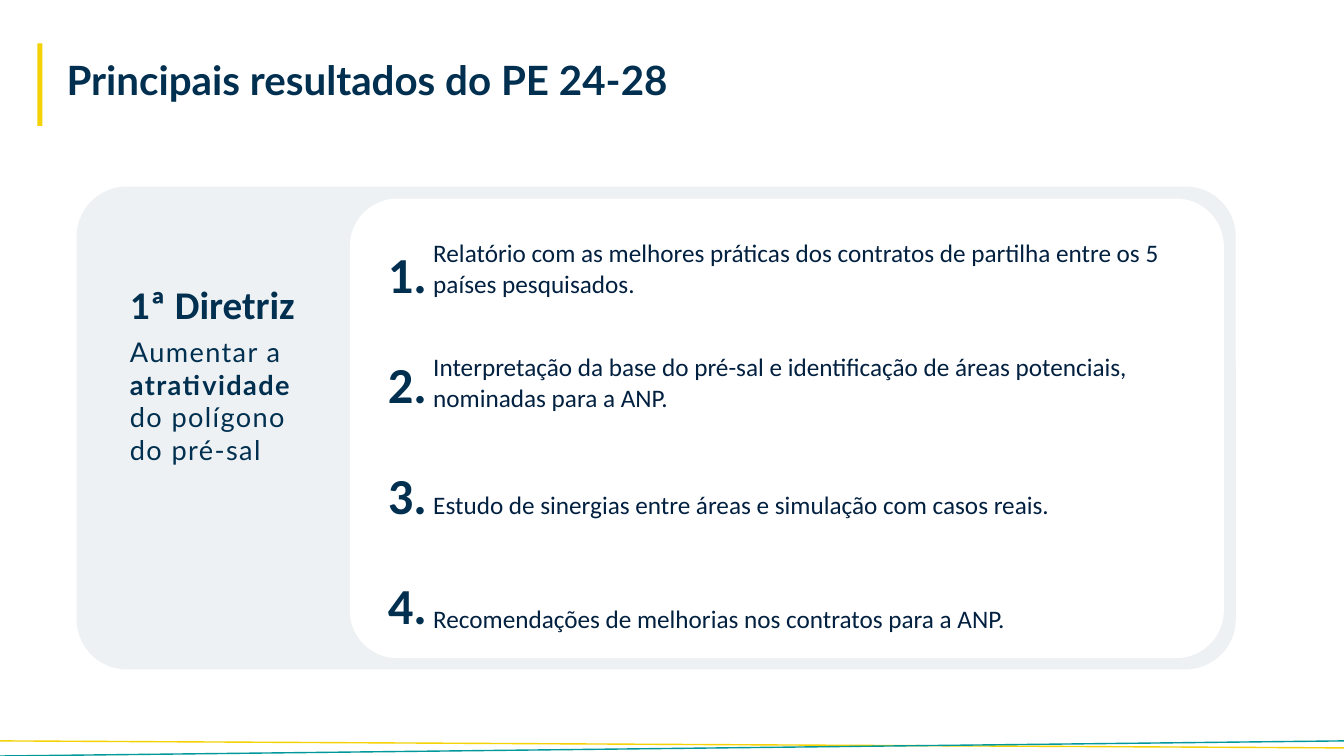
from dataclasses import dataclass

from lxml.etree import SubElement
from pptx import Presentation
from pptx.dml.color import RGBColor
from pptx.enum.shapes import MSO_CONNECTOR, MSO_SHAPE
from pptx.enum.text import MSO_ANCHOR, MSO_AUTO_SIZE, PP_ALIGN
from pptx.oxml.ns import qn
from pptx.util import Inches, Pt

COLORS = {
    "yellow": "F4D205",
    "teal": "00989A",
    "panel": "EDF1F3",
    "white": "FFFFFF",
    "navy": "002F4F",
    "ink": "022040",
}
WIDTH, HEIGHT = Inches(13.333), Inches(7.5)
TEXT_TOP, TEXT_STEP = 30.8, 15.07
NUMBER_TOP, NUMBER_STEP = 31.47, 14.62


@dataclass(frozen=True)
class Box:
    """A rectangle in percent of the slide's width and height."""
    left: float
    top: float
    width: float
    height: float

    def emu(self) -> tuple[int, int, int, int]:
        return (across(self.left), down(self.top),
                across(self.width), down(self.height))


@dataclass(frozen=True)
class Panel:
    box: Box
    color: str
    preset: MSO_SHAPE = MSO_SHAPE.ROUNDED_RECTANGLE


@dataclass(frozen=True)
class Wave:
    start_row: float
    end_row: float
    color: str


@dataclass(frozen=True)
class Result:
    text: str
    lines: int


PANELS = [
    Panel(Box(2.78, 5.73, 0.38, 10.93), "yellow", MSO_SHAPE.RECTANGLE),
    Panel(Box(5.7, 24.67, 86.25, 63.87), "panel"),
    Panel(Box(26.03, 26.27, 65.03, 60.8), "white"),
]
WAVES = [Wave(98.93, 98, "yellow"), Wave(98, 100, "teal")]
RESULTS = [
    Result("Relatório com as melhores práticas dos contratos de partilha "
           "entre os 5 países pesquisados.", 2),
    Result("Interpretação da base do pré-sal e identificação de áreas "
           "potenciais, nominadas para a ANP.", 2),
    Result("Estudo de sinergias entre áreas e simulação com casos reais.", 1),
    Result("Recomendações de melhorias nos contratos para a ANP.", 1),
]


def across(share: float) -> int:
    return round(WIDTH * share / 100)


def down(share: float) -> int:
    return round(HEIGHT * share / 100)


def rgb(name: str) -> RGBColor:
    return RGBColor.from_string(COLORS[name])


def add_panel(s, panel: Panel) -> None:
    sp = s.shapes.add_shape(panel.preset, *panel.box.emu())
    sp.shadow.inherit = False
    sp.fill.solid()
    sp.fill.fore_color.rgb = rgb(panel.color)
    sp.line.fill.background()
    if panel.preset == MSO_SHAPE.ROUNDED_RECTANGLE:
        sp.adjustments[0] = 0.104


def add_wave(s, wave: Wave) -> None:
    line = s.shapes.add_connector(MSO_CONNECTOR.STRAIGHT, WIDTH,
                                  down(wave.start_row), 0, down(wave.end_row))
    line.line.color.rgb = rgb(wave.color)
    line.line.width = Pt(1)
    SubElement(line._element.spPr, qn("a:effectLst"))


def write(tf, runs: list[tuple[str, bool]], *, size: float,
          font: str = "Calibri", color: str = "navy", wrap: bool = True,
          line_spacing: float = 1.0, tracking: float = 0) -> None:
    """Fill a text frame with one paragraph of (text, bold) runs."""
    tf.word_wrap = wrap
    tf.auto_size = MSO_AUTO_SIZE.NONE
    tf.vertical_anchor = MSO_ANCHOR.TOP
    p = tf.paragraphs[0]
    p.alignment = PP_ALIGN.LEFT
    p.line_spacing = line_spacing
    for text, bold in runs:
        r = p.add_run()
        r.text = text
        r.font.name = font
        r.font.size = Pt(size)
        r.font.bold = bold
        r.font.color.rgb = rgb(color)
        if tracking:
            r._r.get_or_add_rPr().set("spc", str(round(tracking * 100)))


def add_text(s, box: Box, runs: list[tuple[str, bool]], **style) -> None:
    write(s.shapes.add_textbox(*box.emu()).text_frame, runs, **style)


def add_result(s, index: int, result: Result) -> None:
    number_top = NUMBER_TOP + index * NUMBER_STEP
    add_text(s, Box(28.13, number_top, 4.43, 9.47), [(f"{index + 1}.", True)],
             size=36, wrap=False)
    single = result.lines == 1
    top = TEXT_TOP + index * TEXT_STEP + (1.07 if single else 0)
    add_text(s, Box(31.5, top, 58.43, 6.8 if single else 9.47),
             [(result.text, False)], size=18, color="ink",
             line_spacing=1.5 if single else 1.0)


def main() -> None:
    prs = Presentation()
    prs.slide_width, prs.slide_height = WIDTH, HEIGHT
    s = prs.slides.add_slide(prs.slide_layouts[5])

    title = s.shapes.title
    title.left, title.top, title.width, title.height = Box(
        4.2, 7.33, 74.63, 9.33).emu()
    write(title.text_frame, [("Principais resultados do PE 24-28", True)],
          size=28.8, font="Lato", line_spacing=0.9)

    for panel in PANELS:
        add_panel(s, panel)
    for wave in WAVES:
        add_wave(s, wave)

    add_text(s, Box(8.93, 36.4, 13.95, 7.6), [("1ª Diretriz", True)],
             size=28, wrap=False)
    add_text(s, Box(8.93, 43.73, 13.95, 18.8),
             [("Aumentar a ", False), ("atratividade ", True),
              ("do polígono do pré-sal", False)],
             size=19.4, font="Lato", tracking=1)
    for index, result in enumerate(RESULTS):
        add_result(s, index, result)

    prs.save("out.pptx")


if __name__ == "__main__":
    main()
